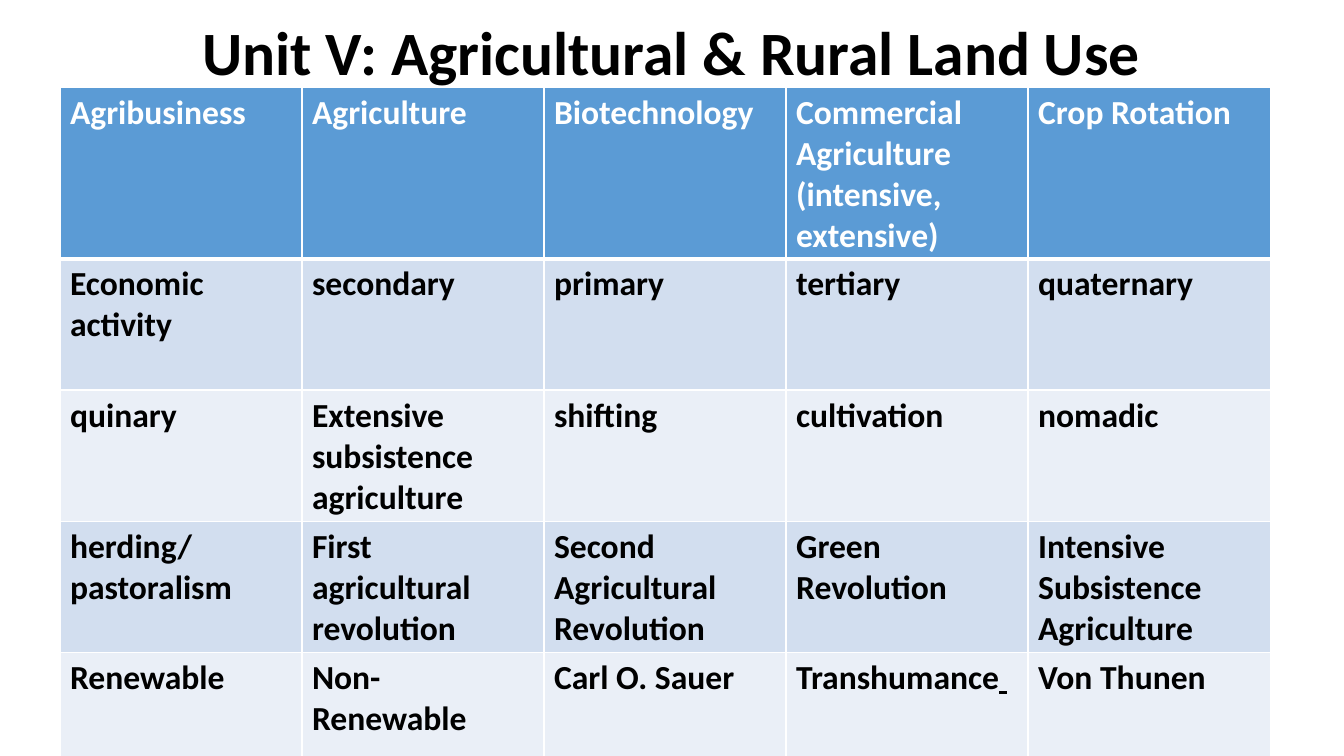
from dataclasses import dataclass

from lxml.etree import SubElement
from pptx import Presentation
from pptx.dml.color import RGBColor
from pptx.enum.text import MSO_ANCHOR, PP_ALIGN
from pptx.oxml.ns import qn
from pptx.util import Pt


@dataclass(frozen=True)
class Theme:
    font: str = "Calibri"
    title_size: int = 44
    term_size: int = 24
    ink: str = "000000"
    white: str = "FFFFFF"
    header_fill: str = "5B9BD5"
    band_fills: tuple = ("D2DEEF", "EAEFF7")
    thin_rule: int = 1
    header_rule: int = 3


THEME = Theme()

TERMS = [
    ["Agribusiness", "Agriculture", "Biotechnology",
     "Commercial Agriculture (intensive, extensive)", "Crop Rotation"],
    ["Economic activity", "secondary", "primary", "tertiary", "quaternary"],
    ["quinary", "Extensive subsistence agriculture", "shifting",
     "cultivation", "nomadic"],
    ["herding/\npastoralism", "First agricultural revolution",
     "Second Agricultural Revolution", "Green Revolution",
     "Intensive Subsistence Agriculture"],
    ["Renewable", "Non-Renewable", "Carl O. Sauer", "Transhumance", "Von Thunen"],
]
COLUMN_WIDTH = 172.9
HEADER_HEIGHT = 121.7
TERM_HEIGHT = 93.6


def format_run(run, size, color, **extra):
    formats = {"name": THEME.font, "size": Pt(size), "bold": True, **extra}
    for attribute, value in formats.items():
        setattr(run.font, attribute, value)
    run.font.color.rgb = RGBColor.from_string(color)


def add_title(slide, wording):
    title = slide.shapes.add_textbox(Pt(66), Pt(-12.2), Pt(828), Pt(104.4))
    frame = title.text_frame
    frame.word_wrap = True
    frame.vertical_anchor = MSO_ANCHOR.MIDDLE
    heading = frame.paragraphs[0]
    heading.alignment = PP_ALIGN.CENTER
    heading.line_spacing = 0.9
    run = heading.add_run()
    run.text = wording
    format_run(run, THEME.title_size, THEME.ink)


def add_borders(cell, widths):
    """Draw white borders; widths maps the sides L, R, T, B to points."""
    properties = cell._tc.get_or_add_tcPr()
    for position, (side, width) in enumerate(widths.items()):
        border = SubElement(properties, qn(f"a:ln{side}"), w=str(Pt(width)))
        fill = SubElement(border, qn("a:solidFill"))
        SubElement(fill, qn("a:srgbClr"), val=THEME.white)
        properties.insert(position, border)


def fill_term_cell(cell, term, row):
    is_header = row == 0
    cell.text = term
    for paragraph in cell.text_frame.paragraphs:
        for run in paragraph.runs:
            format_run(run, THEME.term_size, THEME.white if is_header else THEME.ink)
    band = THEME.header_fill if is_header else THEME.band_fills[(row - 1) % 2]
    cell.fill.solid()
    cell.fill.fore_color.rgb = RGBColor.from_string(band)
    add_borders(cell, {
        "L": THEME.thin_rule,
        "R": THEME.thin_rule,
        "T": THEME.header_rule if row == 1 else THEME.thin_rule,
        "B": THEME.header_rule if is_header else THEME.thin_rule,
    })


def add_term_table(slide, terms):
    heights = [HEADER_HEIGHT] + [TERM_HEIGHT] * (len(terms) - 1)
    columns = len(terms[0])
    table = slide.shapes.add_table(
        len(terms), columns, Pt(42.8), Pt(62.6),
        Pt(COLUMN_WIDTH * columns), Pt(sum(heights))).table
    for row, (height, row_terms) in enumerate(zip(heights, terms)):
        table.rows[row].height = Pt(height)
        for column, term in enumerate(row_terms):
            fill_term_cell(table.cell(row, column), term, row)
    return table


def add_underlined_space(cell):
    space = cell.text_frame.paragraphs[0].add_run()
    space.text = " "
    format_run(space, THEME.term_size, THEME.ink, underline=True)


def main():
    presentation = Presentation()
    presentation.slide_width = Pt(960)
    presentation.slide_height = Pt(540)
    slide = presentation.slides.add_slide(presentation.slide_layouts[6])
    add_title(slide, "Unit V: Agricultural & Rural Land Use")
    term_table = add_term_table(slide, TERMS)
    add_underlined_space(term_table.cell(4, TERMS[4].index("Transhumance")))
    presentation.save("out.pptx")


if __name__ == "__main__":
    main()
